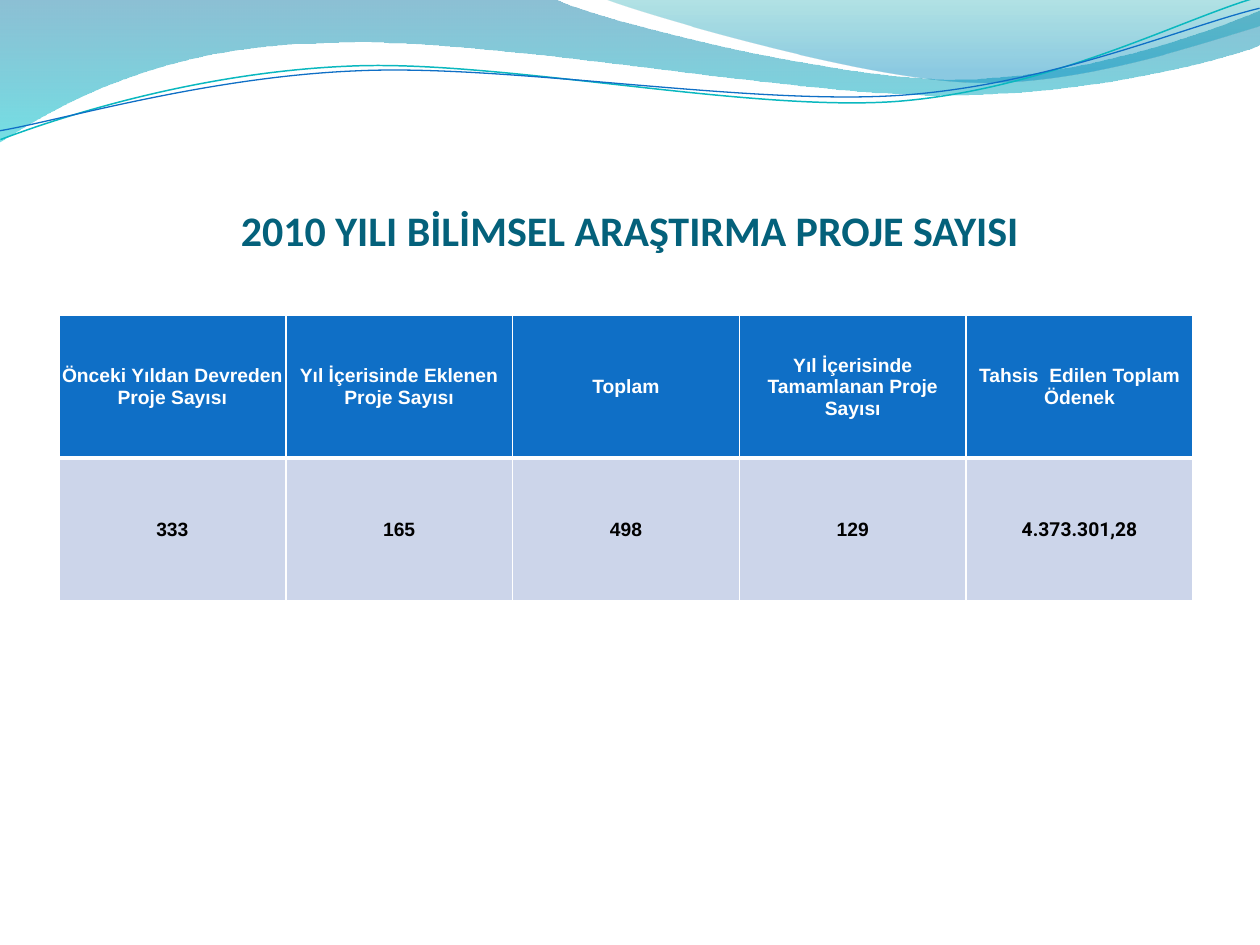
from dataclasses import dataclass

from lxml.etree import SubElement
from pptx import Presentation
from pptx.dml.color import RGBColor
from pptx.enum.text import MSO_ANCHOR, PP_ALIGN
from pptx.oxml.ns import qn
from pptx.util import Pt

PX = 914400 / 126  # EMU in one px
CURVE_TILT = -2.7  # degrees


@dataclass(frozen=True)
class Theme:
    title: str = "04617B"
    header_fill: str = "0F6FC6"
    header_text: str = "FFFFFF"
    body_fill: str = "CCD5EA"
    body_text: str = "000000"
    border: str = "FFFFFF"
    teal_line: str = "0AB8BF"
    blue_line: str = "0F6FC6"
    # Gradient stops: position, colour, opacity in percent
    long_wave: tuple = ((0, "0074A1", 45), (1, "00C6CF", 55))
    short_wave: tuple = ((0, "00A1A9", 30), (0.8, "008BBF", 45))
    title_size: int = 24
    table_size: int = 11


THEME = Theme()

# Each outline is a start point, then lines (one point) and cubic curves (three points)
LONG_WAVE = [
    [(0, 0)],
    [(554, -1)],
    [(600, 21), (837, 79), (955, 79)],
    [(1075, 79), (1207, 33), (1260, 11)],
    [(1261, 45)],
    [(1239, 55), (1096, 96), (940, 95)],
    [(784, 95), (481, 35), (324, 43)],
    [(163, 45), (58, 105), (-1, 142)],
    [(0, 0)],
]
SHORT_WAVE = [
    [(604, -1)],
    [(641, 14), (859, 78), (969, 82)],
    [(1079, 87), (1211, 40), (1260, 26)],
    [(1260, 0)],
    [(604, -1)],
]
# The thin curves are given level, before they are tilted
TEAL_CURVE = [
    [(-2, 110)],
    [(59, 90), (199, 52), (350, 53)],
    [(499, 53), (745, 118), (896, 114)],
    [(1049, 109), (1184, 45), (1260, 27)],
]
BLUE_CURVE = [
    [(-2, 101)],
    [(57, 94), (207, 57), (357, 58)],
    [(509, 58), (750, 112), (902, 108)],
    [(1052, 104), (1188, 52), (1262, 38)],
]

ROWS = [
    [
        "Önceki Yıldan Devreden Proje Sayısı",
        "Yıl İçerisinde Eklenen Proje Sayısı",
        "Toplam",
        "Yıl İçerisinde Tamamlanan Proje Sayısı",
        "Tahsis  Edilen Toplam Ödenek",
    ],
    ["333", "165", "498", "129", "4.373.301,28"],
]


def emu(px):
    return round(px * PX)


def set_all(target, values):
    for name, value in values.items():
        setattr(target, name, value)


def write(frame, text, font, size, colour):
    para = frame.paragraphs[0]
    para.alignment = PP_ALIGN.CENTER
    span = para.add_run()
    span.text = text
    set_all(span.font, {"name": font, "size": Pt(size), "bold": True})
    span.font.color.rgb = RGBColor.from_string(colour)


def add_outline(page, box, segments, close):
    left, top = box[:2]
    points = [(emu(left + x), emu(top + y)) for segment in segments for x, y in segment]
    builder = page.shapes.build_freeform(*points[0], scale=1.0)
    builder.add_line_segments(points[1:], close=close)
    shape = builder.convert_to_shape()
    shape.shadow.inherit = False

    # Join the three steps of each curve into one cubic segment
    outline = next(shape._element.iter(qn("a:path")))
    lines = iter(outline.findall(qn("a:lnTo")))
    for segment in segments[1:]:
        steps = [next(lines) for _ in segment]
        if len(steps) == 3:
            curve = outline.makeelement(qn("a:cubicBezTo"))
            steps[0].addprevious(curve)
            for step in steps:
                curve.append(step[0])
                outline.remove(step)
    return shape


def add_header(page, box):
    # Shaded waves
    for segments, stops in ((LONG_WAVE, THEME.long_wave), (SHORT_WAVE, THEME.short_wave)):
        wave = add_outline(page, box, segments, True)
        wave.line.fill.background()
        wave.fill.gradient()
        wave.fill.gradient_angle = 270
        for stop, (position, colour, _) in zip(wave.fill.gradient_stops, stops):
            stop.position = position
            stop.color.rgb = RGBColor.from_string(colour)
        colours = wave._element.spPr.iter(qn("a:srgbClr"))
        for node, (_, _, opacity) in zip(colours, stops):
            SubElement(node, qn("a:alpha")).set("val", str(opacity * 1000))

    # Thin curves
    for segments, colour, width in (
        (TEAL_CURVE, THEME.teal_line, 0.85),
        (BLUE_CURVE, THEME.blue_line, 0.75),
    ):
        curve = add_outline(page, box, segments, False)
        curve.rotation = CURVE_TILT
        curve.fill.background()
        curve.line.color.rgb = RGBColor.from_string(colour)
        curve.line.width = Pt(width)


def add_title(page, box, text):
    frame = page.shapes.add_textbox(*map(emu, box)).text_frame
    set_all(frame, {
        "word_wrap": True, "vertical_anchor": MSO_ANCHOR.BOTTOM,
        "margin_left": 0, "margin_right": 0, "margin_top": emu(6), "margin_bottom": 0,
    })
    write(frame, text, "Calibri", THEME.title_size, THEME.title)


def set_borders(cell, widths):
    properties = cell._tc.get_or_add_tcPr()
    for index, (side, width) in enumerate(widths.items()):
        line = properties.makeelement(qn(f"a:ln{side}"), {"w": str(Pt(width))})
        fill = SubElement(line, qn("a:solidFill"))
        SubElement(fill, qn("a:srgbClr")).set("val", THEME.border)
        properties.insert(index, line)


def add_project_table(page, box, rows):
    table = page.shapes.add_table(len(rows), len(rows[0]), *map(emu, box)).table
    table.horz_banding = False
    for column in table.columns:
        column.width = emu(box[2] / len(rows[0]))
    for row in table.rows:
        row.height = emu(box[3] / len(rows))

    looks = (
        (THEME.header_fill, THEME.header_text, {"L": 1, "R": 1, "T": 1, "B": 3}),
        (THEME.body_fill, THEME.body_text, {"L": 1, "R": 1, "T": 3, "B": 1}),
    )
    for r, (texts, (fill, colour, widths)) in enumerate(zip(rows, looks)):
        for c, text in enumerate(texts):
            cell = table.cell(r, c)
            set_all(cell, {
                "vertical_anchor": MSO_ANCHOR.MIDDLE, "margin_left": emu(1),
                "margin_right": emu(1), "margin_top": emu(1), "margin_bottom": 0,
            })
            cell.fill.solid()
            cell.fill.fore_color.rgb = RGBColor.from_string(fill)
            set_borders(cell, widths)
            is_amount = r == 1 and c == len(texts) - 1
            font = "Roboto" if is_amount else "Arial"
            write(cell.text_frame, text, font, THEME.table_size, colour)


def main():
    deck = Presentation()
    set_all(deck, {"slide_width": emu(1260), "slide_height": emu(945)})
    page = deck.slides.add_slide(deck.slide_layouts[6])
    add_header(page, (0, 0, 1260, 142))
    add_title(page, (63, 97, 1134, 158), "2010 YILI BİLİMSEL ARAŞTIRMA PROJE SAYISI")
    add_project_table(page, (59, 315, 1134, 286), ROWS)
    deck.save("out.pptx")


if __name__ == "__main__":
    main()
